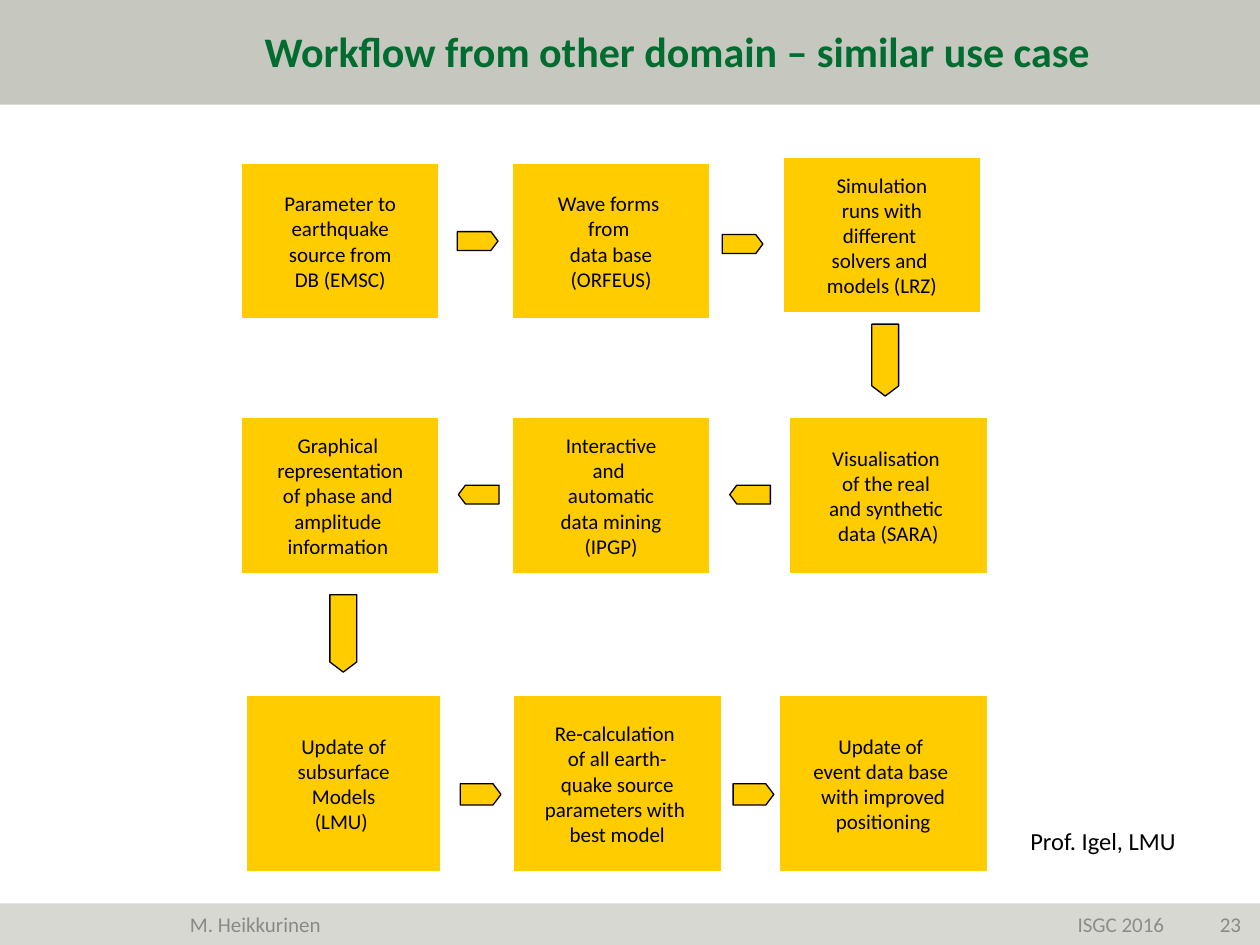
"""Build a slide showing a nine-step earthquake analysis workflow."""
import pptx
import pptx.dml.color
import pptx.enum.shapes
import pptx.enum.text
import pptx.util

Cm = pptx.util.Cm
Pt = pptx.util.Pt
RGBColor = pptx.dml.color.RGBColor
MSO_SHAPE = pptx.enum.shapes.MSO_SHAPE
PP_ALIGN = pptx.enum.text.PP_ALIGN
MSO_ANCHOR = pptx.enum.text.MSO_ANCHOR

HEADER = RGBColor(0xC6, 0xC7, 0xBE)
FOOTER = RGBColor(0xD7, 0xD8, 0xD1)
GREEN = RGBColor(0x00, 0x6C, 0x30)
YELLOW = RGBColor(0xFF, 0xCC, 0x00)
BLACK = RGBColor(0x00, 0x00, 0x00)
GREY = RGBColor(0x89, 0x89, 0x89)
VENUE_GREY = RGBColor(0x8C, 0x8C, 0x8C)


def add_filled_shape(kind, bounds, color):
    shape = slide.shapes.add_shape(kind, *map(Cm, bounds))
    shape.shadow.inherit = False
    shape.fill.solid()
    shape.fill.fore_color.rgb = color
    shape.line.fill.background()
    return shape


def write_text(shape, text, size, color, alignment, wrap=True, bold=False):
    frame = shape.text_frame
    frame.text = text
    frame.word_wrap = wrap
    frame.vertical_anchor = MSO_ANCHOR.MIDDLE
    font_format = {"name": "Calibri", "size": Pt(size), "bold": bold}
    for paragraph in frame.paragraphs:
        paragraph.alignment = alignment
        for run in paragraph.runs:
            for attribute, value in font_format.items():
                setattr(run.font, attribute, value)
            run.font.color.rgb = color


presentation = pptx.Presentation()
presentation.slide_width = Cm(25.4)
presentation.slide_height = Cm(19.05)
slide = presentation.slides.add_slide(presentation.slide_layouts[5])

add_filled_shape(MSO_SHAPE.RECTANGLE, (0, 18.21, 25.4, 0.84), FOOTER)
add_filled_shape(MSO_SHAPE.RECTANGLE, (0, 0, 25.4, 2.11), HEADER)

title = slide.shapes.title
title_bounds = {"left": 5.08, "top": 0.2, "width": 17.35, "height": 1.78}
for attribute, value in title_bounds.items():
    setattr(title, attribute, Cm(value))
write_text(title, "Workflow from other domain – similar use case", 24, GREEN,
           PP_ALIGN.LEFT, bold=True)
title.text_frame.paragraphs[0].line_spacing = 0.9
title.element.getparent().append(title.element)

footers = [
    ("M. Heikkurinen", 3.58, 5.92, GREY, PP_ALIGN.LEFT),
    ("ISGC 2016", 15.67, 8.05, VENUE_GREY, PP_ALIGN.RIGHT),
    ("23", 23.8, 1.47, GREY, PP_ALIGN.RIGHT),
]
for text, left, width, color, alignment in footers:
    footer = slide.shapes.add_textbox(Cm(left), Cm(18.21), Cm(width), Cm(0.84))
    write_text(footer, text, 12, color, alignment)

steps = [
    (4.88, 3.3, 3.96, 3.12, "Parameter to\nearthquake\nsource from\nDB (EMSC)"),
    (10.34, 3.3, 3.96, 3.12, "Wave forms \nfrom \ndata base\n(ORFEUS)"),
    (15.8, 3.18, 3.96, 3.12,
     "Simulation\nruns with\ndifferent \nsolvers and \nmodels (LRZ)"),
    (15.93, 8.43, 3.96, 3.12,
     "Visualisation \vof the real \nand synthetic \ndata (SARA)"),
    (10.34, 8.43, 3.96, 3.12,
     "Interactive\nand \nautomatic\ndata mining\n(IPGP)"),
    (4.88, 8.43, 3.96, 3.12,
     "Graphical \nrepresentation\nof phase and \namplitude \ninformation "),
    (4.98, 14.04, 3.9, 3.52, "Update of\vsubsurface\nModels\n(LMU) "),
    (10.36, 14.04, 4.17, 3.52,
     "Re-calculation \nof all earth-\nquake source\nparameters with \nbest model"),
    (15.72, 14.04, 4.17, 3.52,
     "Update of \nevent data base \nwith improved\npositioning"),
]
for *bounds, text in steps:
    step = add_filled_shape(MSO_SHAPE.ACTION_BUTTON_CUSTOM, bounds, YELLOW)
    write_text(step, text, 12, BLACK, PP_ALIGN.CENTER, wrap=False)

arrows = [
    (9.22, 4.67, 0.82, 0.38, 0),
    (14.56, 4.73, 0.82, 0.38, 0),
    (17.12, 6.99, 1.45, 0.54, 90),
    (14.71, 9.78, 0.82, 0.38, 180),
    (9.24, 9.78, 0.82, 0.38, 180),
    (6.14, 12.5, 1.56, 0.54, 90),
    (9.28, 15.8, 0.82, 0.43, 0),
    (14.78, 15.8, 0.82, 0.43, 0),
]
for *bounds, rotation in arrows:
    arrow = add_filled_shape(MSO_SHAPE.PENTAGON, bounds, YELLOW)
    arrow.adjustments[0] = 0.376
    arrow.rotation = rotation
    arrow.line.color.rgb = BLACK
    arrow.line.width = Pt(0.75)

credit = slide.shapes.add_textbox(Cm(20.52), Cm(16.51), Cm(3.84), Cm(0.86))
write_text(credit, "Prof. Igel, LMU", 14, BLACK, PP_ALIGN.LEFT, wrap=False)

presentation.save("out.pptx")
